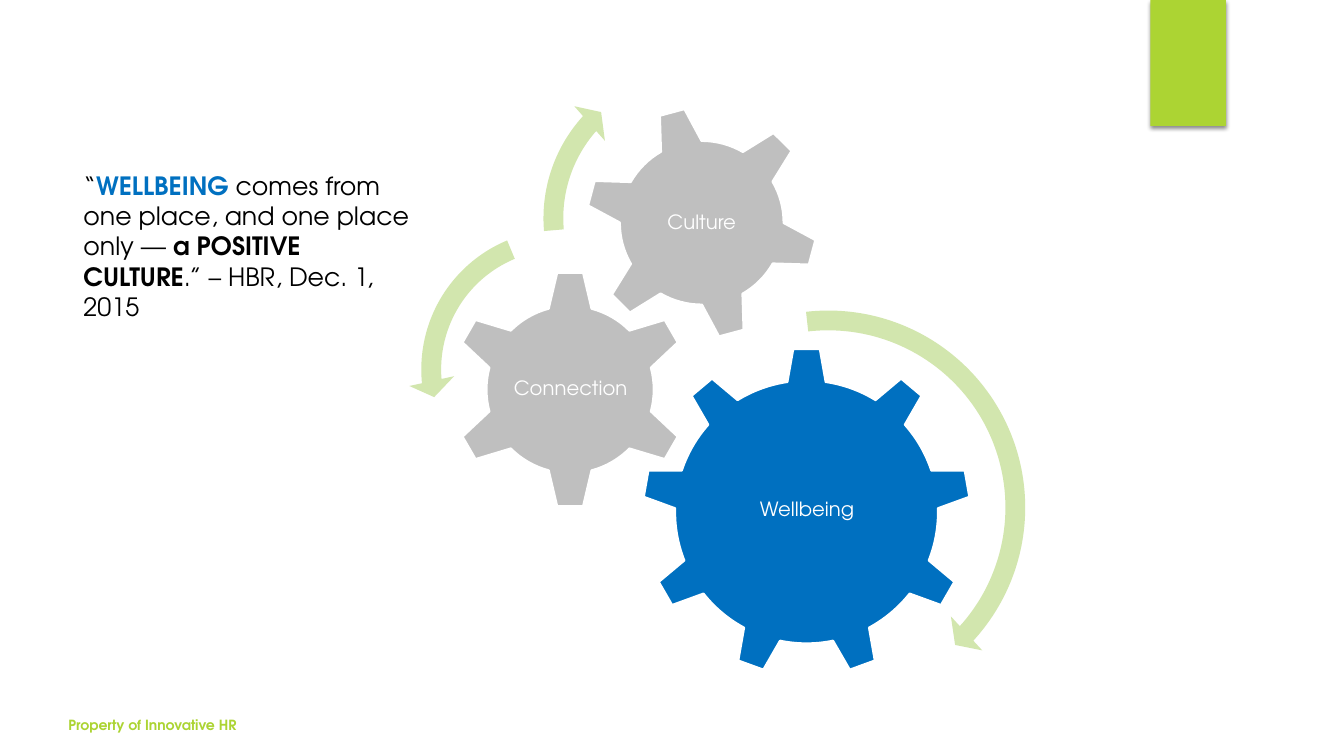
from lxml.etree import SubElement
from pptx import Presentation
from pptx.dml.color import RGBColor
from pptx.enum.shapes import MSO_SHAPE
from pptx.enum.text import MSO_ANCHOR, PP_ALIGN
from pptx.oxml.ns import qn
from pptx.util import Inches, Pt

COLORS = {
    "lime": "ACD433",
    "pale": "D2E6AE",
    "blue": "0070C0",
    "gray": "BFBFBF",
    "white": "FFFFFF",
    "black": "000000",
}


class SlideBuilder:
    """Hold the slide and its style, and add each kind of element."""

    font = "TeX Gyre Adventor"

    def __init__(self, prs):
        self.slide = prs.slides.add_slide(prs.slide_layouts[6])

    def color(self, name):
        return RGBColor.from_string(COLORS[name])

    def shape(self, kind, box, fill, adjustments=()):
        sp = self.slide.shapes.add_shape(kind, *map(Inches, box))
        sp.shadow.inherit = False
        sp.fill.solid()
        sp.fill.fore_color.rgb = self.color(fill)
        sp.line.fill.background()
        for i, value in enumerate(adjustments):
            sp.adjustments[i] = value
        return sp

    def ribbon(self, box, fill):
        sp = self.shape(MSO_SHAPE.RECTANGLE, box, fill)
        effects = sp._element.spPr.find(qn("a:effectLst"))
        shadow = SubElement(effects, qn("a:outerShdw"), blurRad=str(Pt(3)),
                            dist=str(Pt(2)), dir="5400000", rotWithShape="0")
        tint = SubElement(shadow, qn("a:srgbClr"), val=COLORS["black"])
        SubElement(tint, qn("a:alpha"), val="45000")

    def text(self, box, runs, size, anchor=MSO_ANCHOR.TOP):
        tb = self.slide.shapes.add_textbox(*map(Inches, box))
        tf = tb.text_frame
        tf.word_wrap = True
        tf.vertical_anchor = anchor
        p = tf.paragraphs[0]
        for words, color, bold in runs:
            r = p.add_run()
            r.text = words
            r.font.name = self.font
            r.font.size = Pt(size)
            r.font.bold = bold
            r.font.color.rgb = self.color(color)
        return tf

    def gear(self, kind, box, fill, label, label_box, rotation=0):
        sp = self.shape(kind, box, fill)
        sp.rotation = rotation
        sp.line.color.rgb = self.color("white")
        sp.line.width = Pt(1.5)
        tf = self.text(label_box, [(label, "white", False)], 14, MSO_ANCHOR.MIDDLE)
        tf.margin_left = tf.margin_right = Inches(0.02)
        tf.margin_top = tf.margin_bottom = Inches(0.02)
        tf.paragraphs[0].alignment = PP_ALIGN.CENTER
        tf.paragraphs[0].line_spacing = 0.9


def main():
    prs = Presentation()
    prs.slide_width, prs.slide_height = Inches(13.33), Inches(7.5)
    s = SlideBuilder(prs)

    s.ribbon((11.41, 0, 0.75, 1.25), "lime")

    s.gear(MSO_SHAPE.GEAR_9, (6.37, 3.45, 3.26, 3.26), "blue",
           "Wellbeing", (7.03, 4.22, 1.95, 1.68))
    s.gear(MSO_SHAPE.GEAR_6, (4.47, 2.68, 2.37, 2.37), "gray",
           "Connection", (5.07, 3.28, 1.18, 1.17))
    s.gear(MSO_SHAPE.GEAR_6, (5.8, 1.05, 2.32, 2.32), "gray",
           "Culture", (6.31, 1.56, 1.3, 1.3), rotation=345)

    arrows = [
        (MSO_SHAPE.CIRCULAR_ARROW, (6.13, 2.95, 4.17, 4.17),
         (0.047, 2.99, 25.39, 158.12, 0.055)),
        (MSO_SHAPE.LEFT_CIRCULAR_ARROW, (4.05, 2.15, 3.03, 3.03),
         (0.065, 4.3, 104.89, 148.38, 0.075)),
        (MSO_SHAPE.CIRCULAR_ARROW, (5.26, 0.53, 3.27, 3.27),
         (0.06, 3.94, 133.14, 105.08, 0.07)),
    ]
    for kind, box, adjustments in arrows:
        s.shape(kind, box, "pale", adjustments)

    s.text((0.73, 1.64, 3.46, 2.83), [
        ("“", "black", False),
        ("WELLBEING", "blue", True),
        (" comes from one place, and one place only — ", "black", False),
        ("a POSITIVE CULTURE", "black", True),
        (".” – HBR, Dec. 1, 2015", "black", False),
    ], 18)
    s.text((0.58, 6.99, 4.22, 0.33),
           [("Property of Innovative HR", "lime", True)], 10, MSO_ANCHOR.BOTTOM)

    prs.save("out.pptx")


if __name__ == "__main__":
    main()
